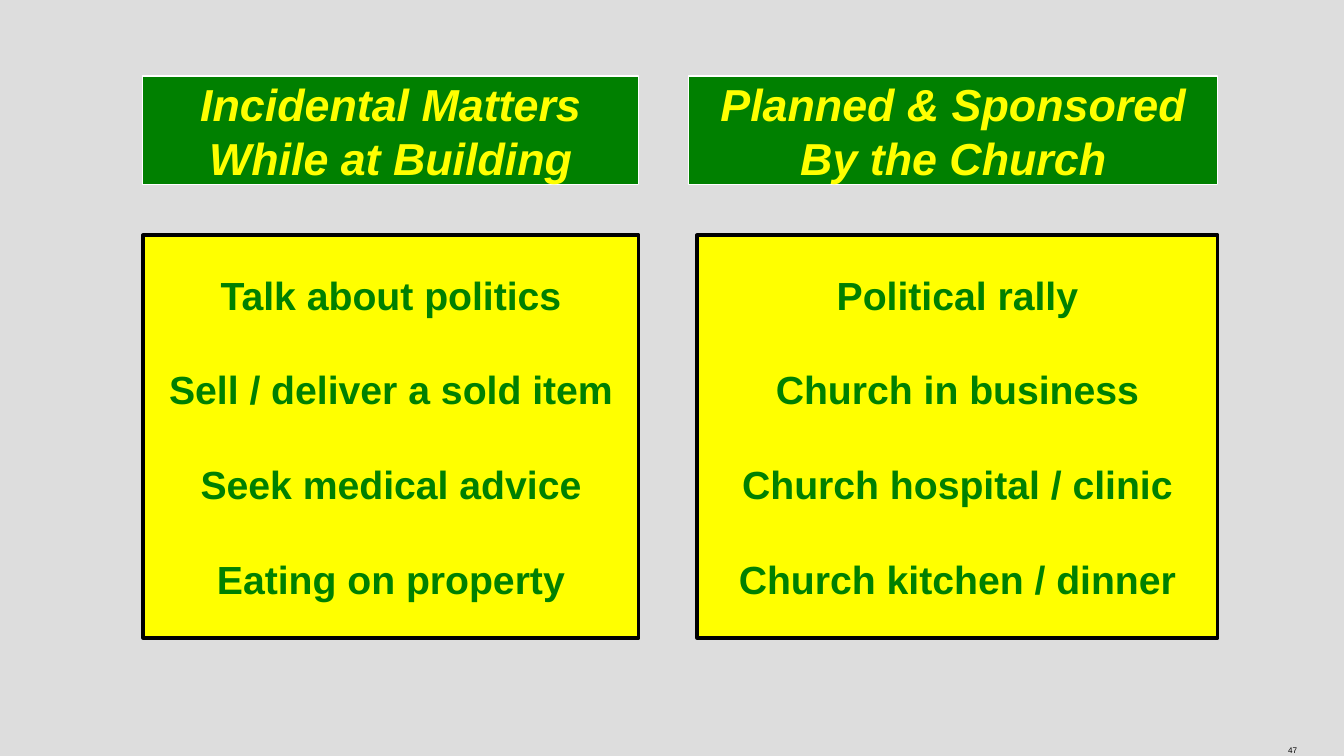
import pptx
import pptx.util
import pptx.dml.color
import pptx.enum.shapes
import pptx.enum.text

Pt = pptx.util.Pt
RGBColor = pptx.dml.color.RGBColor
PP_ALIGN = pptx.enum.text.PP_ALIGN

GREY = RGBColor(0xDD, 0xDD, 0xDD)
GREEN = RGBColor(0x00, 0x80, 0x00)
YELLOW = RGBColor(0xFF, 0xFF, 0x00)
WHITE = RGBColor(0xFF, 0xFF, 0xFF)
BLACK = RGBColor(0x00, 0x00, 0x00)


def px(n):
    return pptx.util.Emu(round(n * 914400 / 100.8))


def add_panel(box, lines, fill, line, line_width, color, size, italic, gap):
    """Add a filled rectangle of centred bold lines, gap points apart."""
    sp = s.shapes.add_shape(pptx.enum.shapes.MSO_SHAPE.RECTANGLE, *map(px, box))
    sp.shadow.inherit = False
    sp.fill.solid()
    sp.fill.fore_color.rgb = fill
    sp.line.color.rgb = line
    sp.line.width = Pt(line_width)
    tf = sp.text_frame
    tf.word_wrap = False
    tf.vertical_anchor = pptx.enum.text.MSO_ANCHOR.MIDDLE
    tf.text = "\n".join(lines)
    for i, p in enumerate(tf.paragraphs):
        p.alignment = PP_ALIGN.CENTER
        p.space_before = Pt(gap if i else 0)
        p.font.name = "Arial"
        p.font.size = Pt(size)
        p.font.bold = True
        p.font.italic = italic
        p.font.color.rgb = color


prs = pptx.Presentation()
prs.slide_width, prs.slide_height = px(1344), px(756)
s = prs.slides.add_slide(prs.slide_layouts[6])
s.background.fill.solid()
s.background.fill.fore_color.rgb = GREY

headings = [
    ((143, 76, 496, 109), ["Incidental Matters", "While at Building"]),
    ((689, 76, 529, 109), ["Planned & Sponsored", "By the Church"]),
]
for box, lines in headings:
    add_panel(box, lines, GREEN, WHITE, 0.75, YELLOW, 32, True, 0)

lists = [
    ((143, 235, 496, 403), ["Talk about politics", "Sell / deliver a sold item",
                            "Seek medical advice", "Eating on property"]),
    ((697, 235, 521, 403), ["Political rally", "Church in business",
                            "Church hospital / clinic", "Church kitchen / dinner"]),
]
for box, lines in lists:
    add_panel(box, lines, YELLOW, BLACK, 2.25, GREEN, 28, False, 34)

number = s.shapes.add_textbox(px(994), px(731), px(313), px(25))
number.text_frame.word_wrap = True
p = number.text_frame.paragraphs[0]
p.alignment = PP_ALIGN.RIGHT
p.font.name = "Arial"
p.font.size = Pt(10)
p.font.color.rgb = BLACK
r = p.add_run()
r.text = "47"
r._r.get_or_add_rPr().set("baseline", "-25000")

prs.save("out.pptx")
